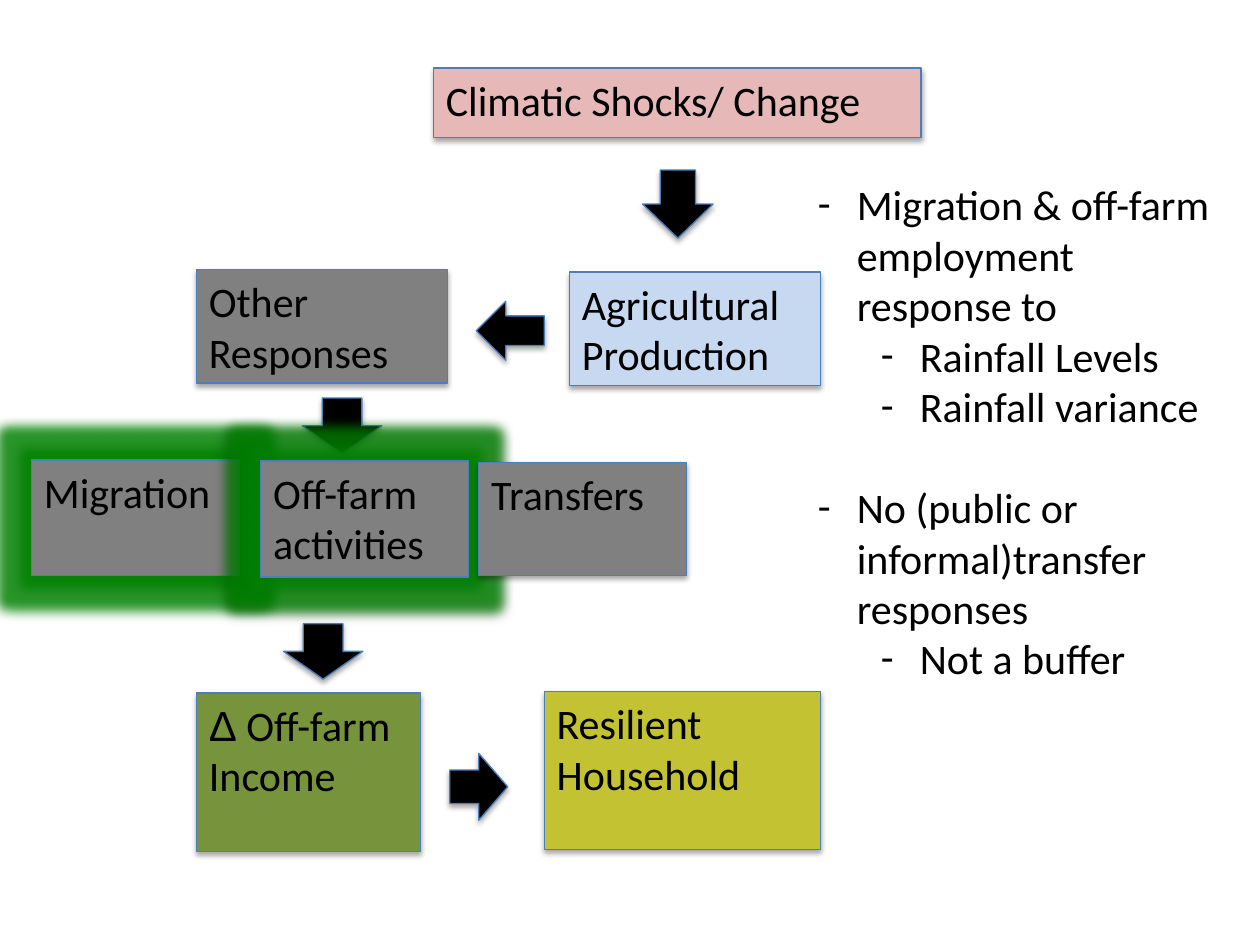
import pptx
import pptx.util
import pptx.dml.color
import pptx.enum.shapes
import pptx.enum.text
import pptx.oxml

SHAPES = pptx.enum.shapes.MSO_SHAPE
COLORS = {
    "black": "000000", "outline": "4B7EBC", "gray": "808080", "green": "008000",
    "pink": "E6B9B8", "blue": "C6D9F1", "olive": "77933C", "yellow": "C3C232",
}
NAMESPACE = 'xmlns:a="http://schemas.openxmlformats.org/drawingml/2006/main"'
POINT = 12700

deck = pptx.Presentation()
deck.slide_width = pptx.util.Inches(10)
deck.slide_height = pptx.util.Inches(7.5)
page = deck.slides.add_slide(deck.slide_layouts[1])
title, notes = page.placeholders
title.element.getparent().remove(title.element)

# Grid of 100 columns by 75 rows
COLUMN = deck.slide_width / 100
ROW = deck.slide_height / 75


def style_text(span, font="Calibri"):
    span.font.name = font
    span.font.size = pptx.util.Pt(24)
    span.font.color.rgb = pptx.dml.color.RGBColor.from_string(COLORS["black"])


def add_block(kind, left, top, width, height, fill, shadow="black", glow=False):
    """Add an outlined shape, placed in grid units, with its shadow and glow."""
    block = page.shapes.add_shape(
        kind, int(left * COLUMN), int(top * ROW), int(width * COLUMN), int(height * ROW))
    block.fill.solid()
    block.fill.fore_color.rgb = pptx.dml.color.RGBColor.from_string(COLORS[fill])
    block.line.color.rgb = pptx.dml.color.RGBColor.from_string(COLORS["outline"])
    block.line.width = pptx.util.Pt(0.75)
    block.shadow.inherit = False
    effects = block.element.spPr.find(pptx.oxml.ns.qn("a:effectLst"))
    if glow:
        effects.append(pptx.oxml.parse_xml(
            f'<a:glow {NAMESPACE} rad="{13 * POINT}"><a:srgbClr val="{COLORS["green"]}">'
            '<a:alpha val="80000"/></a:srgbClr></a:glow>'))
    effects.append(pptx.oxml.parse_xml(
        f'<a:outerShdw {NAMESPACE} blurRad="{int(3.1 * POINT)}" dist="{int(1.8 * POINT)}" '
        f'dir="5400000" rotWithShape="0"><a:srgbClr val="{COLORS[shadow]}">'
        '<a:alpha val="35000"/></a:srgbClr></a:outerShdw>'))
    return block


# Arrows: kind, left, top, width, height
arrows = [
    (SHAPES.DOWN_ARROW, 51, 13.5, 5.6, 5.4),
    (SHAPES.LEFT_ARROW, 37.8, 23.9, 5.4, 4.7),
    (SHAPES.DOWN_ARROW, 24, 31.6, 6.3, 4.4),
    (SHAPES.DOWN_ARROW, 22.5, 49.5, 6.3, 4.4),
    (SHAPES.RIGHT_ARROW, 35.7, 59.8, 4.6, 5.3),
]
for arrow in arrows:
    add_block(*arrow, "black")

# Boxes: text, left, top, width, height, fill, shadow, glow
boxes = [
    ("Climatic Shocks/ Change", 34.4, 5.4, 38.7, 5.5, "pink", "black", False),
    ("Agricultural Production", 45.2, 21.6, 19.9, 9, "blue", "black", False),
    ("Other Responses", 15.6, 21.4, 19.9, 9, "gray", "black", False),
    ("Migration", 2.5, 36.5, 16.5, 9.2, "gray", "green", True),
    ("Off-farm activities", 20.7, 36.6, 16.5, 9.2, "gray", "black", True),
    ("Transfers", 38, 36.7, 16.5, 9, "gray", "black", False),
    ("Δ Off-farm Income", 15.6, 55, 17.8, 12.6, "olive", "black", False),
    ("Resilient Household", 43.2, 54.9, 21.9, 12.5, "yellow", "black", False),
]
for text, *look in boxes:
    box = add_block(SHAPES.RECTANGLE, *look)
    frame = box.text_frame
    frame.word_wrap = True
    frame.vertical_anchor = pptx.enum.text.MSO_ANCHOR.TOP
    para = frame.paragraphs[0]
    para.alignment = pptx.enum.text.PP_ALIGN.LEFT
    symbol = "Δ " if text.startswith("Δ ") else ""
    for part, font in ((symbol, "Arial"), (text[len(symbol):], "Calibri")):
        if part:
            span = para.add_run()
            span.text = part
            style_text(span, font)

# Findings list: text, level, space before in points
findings = [
    ("Migration & off-farm employment response to", 0, 0),
    ("Rainfall Levels", 1, 0),
    ("Rainfall variance", 1, 0),
    ("No (public or informal)transfer responses", 0, 29),
    ("Not a buffer", 1, 0),
]
notes.left, notes.top = int(63.9 * COLUMN), int(13.7 * ROW)
notes.width, notes.height = int(34.5 * COLUMN), int(41.4 * ROW)
frame = notes.text_frame
frame.word_wrap = True
frame.auto_size = pptx.enum.text.MSO_AUTO_SIZE.NONE
for index, (text, level, gap) in enumerate(findings):
    para = frame.add_paragraph() if index else frame.paragraphs[0]
    para.text = text
    para.level = level
    para.space_before = pptx.util.Pt(gap)
    settings = para._p.get_or_add_pPr()
    settings.set("marL", str(pptx.util.Inches(0.31 + 0.5 * level)))
    settings.set("indent", str(pptx.util.Inches(-0.31)))
    for bullet in ('buFont {} typeface="Calibri"', 'buChar {} char="-"'):
        settings.append(pptx.oxml.parse_xml(f"<a:{bullet.format(NAMESPACE)}/>"))
    style_text(para.runs[0])

deck.save("out.pptx")
